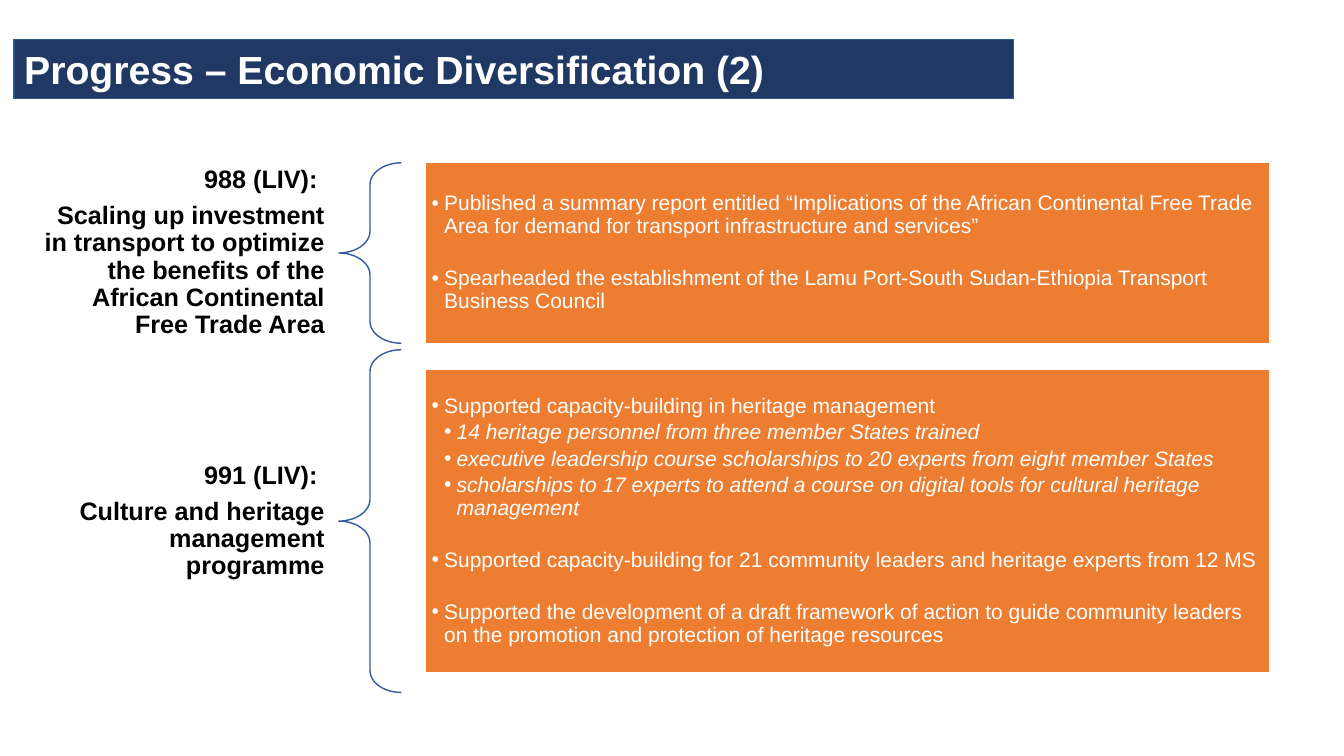
from lxml.etree import SubElement
from pptx import Presentation
from pptx.dml.color import RGBColor
from pptx.enum.shapes import MSO_SHAPE
from pptx.enum.text import MSO_ANCHOR, MSO_AUTO_SIZE, PP_ALIGN
from pptx.oxml.ns import qn
from pptx.util import Inches, Pt

TITLE = "Progress – Economic Diversification (2)"
# Bullets are (level, starts a new group, text); lengths are in inches.
DECISIONS = [
    {
        "label": ["988 (LIV): ",
                  "Scaling up investment in transport to optimize the benefits "
                  "of the African Continental Free Trade Area"],
        "bullets": [
            (0, False, "Published a summary report entitled “Implications of the African "
                       "Continental Free Trade Area for demand for transport "
                       "infrastructure and services”"),
            (0, True, "Spearheaded the establishment of the Lamu Port-South "
                      "Sudan-Ethiopia Transport Business Council"),
        ],
        "middle": 2.51, "label_height": 1.79, "brace_height": 1.79, "panel_height": 1.79,
    },
    {
        "label": ["991 (LIV): ", "Culture and heritage management programme"],
        "bullets": [
            (0, False, "Supported capacity-building in heritage management"),
            (1, False, "14 heritage personnel from three member States trained"),
            (1, False, "executive leadership course scholarships to 20 experts "
                       "from eight member States"),
            (1, False, "scholarships to 17 experts to attend a course on digital "
                       "tools for cultural heritage management"),
            (0, True, "Supported capacity-building for 21 community leaders and "
                      "heritage experts from 12 MS"),
            (0, True, "Supported the development of a draft framework of action to "
                      "guide community leaders on the promotion and protection of "
                      "heritage resources"),
        ],
        "middle": 5.17, "label_height": 1.27, "brace_height": 3.4, "panel_height": 3.01,
    },
]
LABEL_LEFT, LABEL_WIDTH = 0.28, 3.08
BRACE_LEFT, BRACE_WIDTH = 3.36, 0.62
PANEL_LEFT, PANEL_WIDTH = 4.22, 8.37
INDENT = 0.125

TITLE_FONT = {"size": Pt(28), "bold": True}
LABEL_FONT = {"size": Pt(18), "bold": True}
BULLET_FONT = {"size": Pt(15), "bold": False}
LABEL_SPACING = {"alignment": PP_ALIGN.RIGHT, "line_spacing": 0.9,
                 "space_before": Pt(0), "space_after": Pt(6.3)}
BULLET_SPACING = {"alignment": PP_ALIGN.LEFT, "line_spacing": 0.9,
                  "space_after": Pt(2.6)}
GROUP_GAP = Pt(18.5)


def rgb(color):
    return RGBColor.from_string(color)


def apply(target, values):
    for name, value in values.items():
        setattr(target, name, value)


def place(shape, left, top, width, height):
    apply(shape, {"left": Inches(left), "top": Inches(top),
                  "width": Inches(width), "height": Inches(height)})


def paint(shape, fill, line):
    shape.fill.solid()
    shape.fill.fore_color.rgb = rgb(fill)
    shape.line.color.rgb = rgb(line)
    shape.line.width = Pt(1)


def set_frame(shape, side, edge):
    """Centre the text vertically, with the given side and top/bottom insets."""
    apply(shape.text_frame, {
        "word_wrap": True, "auto_size": MSO_AUTO_SIZE.NONE,
        "vertical_anchor": MSO_ANCHOR.MIDDLE,
        "margin_left": Inches(side), "margin_right": Inches(side),
        "margin_top": Inches(edge), "margin_bottom": Inches(edge)})


def write(paragraph, text, color, font):
    run = paragraph.add_run()
    run.text = text
    apply(run.font, {"name": "Arial", **font})
    run.font.color.rgb = rgb(color)


def paragraphs(frame, items):
    """Pair each item with its own paragraph of the frame."""
    for number, item in enumerate(items):
        yield (frame.add_paragraph() if number else frame.paragraphs[0]), item


def add_bullet(paragraph, level):
    paragraph.level = level
    properties = paragraph._p.get_or_add_pPr()
    properties.set("marL", str(Inches(INDENT * (level + 1))))
    properties.set("indent", str(-Inches(INDENT)))
    SubElement(properties, qn("a:buFont"), typeface="Arial")
    SubElement(properties, qn("a:buChar"), char="•")


def fill_title(title):
    place(title, 0.14, 0.39, 9.91, 0.59)
    outline = SubElement(title._element.spPr, qn("a:prstGeom"), prst="roundRect")
    SubElement(outline, qn("a:avLst"))
    paint(title, "203864", "325491")
    set_frame(title, 0.1, 0.05)
    heading = title.text_frame.paragraphs[0]
    heading.alignment = PP_ALIGN.LEFT
    write(heading, TITLE, "FFFFFF", TITLE_FONT)


def fill_label(label, decision):
    height = decision["label_height"]
    place(label, LABEL_LEFT, decision["middle"] - height / 2, LABEL_WIDTH, height)
    set_frame(label, 0.14, 0.05)
    for paragraph, text in paragraphs(label.text_frame, decision["label"]):
        apply(paragraph, LABEL_SPACING)
        write(paragraph, text, "000000", LABEL_FONT)


def add_brace(slide, decision):
    height = decision["brace_height"]
    brace = slide.shapes.add_shape(
        MSO_SHAPE.LEFT_BRACE, Inches(BRACE_LEFT), Inches(decision["middle"] - height / 2),
        Inches(BRACE_WIDTH), Inches(height))
    brace.shadow.inherit = False
    brace.adjustments[0] = 0.35
    brace.fill.background()
    brace.line.color.rgb = rgb("365B9D")
    brace.line.width = Pt(1)


def fill_panel(panel, decision):
    height = decision["panel_height"]
    place(panel, PANEL_LEFT, decision["middle"] - height / 2, PANEL_WIDTH, height)
    paint(panel, "ED7D31", "FFFFFF")
    set_frame(panel, 0.06, 0.06)
    for paragraph, bullet in paragraphs(panel.text_frame, decision["bullets"]):
        level, new_group, text = bullet
        add_bullet(paragraph, level)
        apply(paragraph, BULLET_SPACING)
        paragraph.space_before = GROUP_GAP if new_group else Pt(0)
        write(paragraph, text, "FFFFFF", {**BULLET_FONT, "italic": level == 1})


def main():
    deck = Presentation()
    deck.slide_width, deck.slide_height = Inches(13.33), Inches(7.5)
    comparison = deck.slide_layouts.get_by_name("Comparison")
    slide = deck.slides.add_slide(comparison)
    title, *bodies = slide.placeholders
    fill_title(title)
    for decision, label, panel in zip(DECISIONS, bodies[::2], bodies[1::2]):
        fill_label(label, decision)
        add_brace(slide, decision)
        fill_panel(panel, decision)
    deck.save("out.pptx")


if __name__ == "__main__":
    main()
